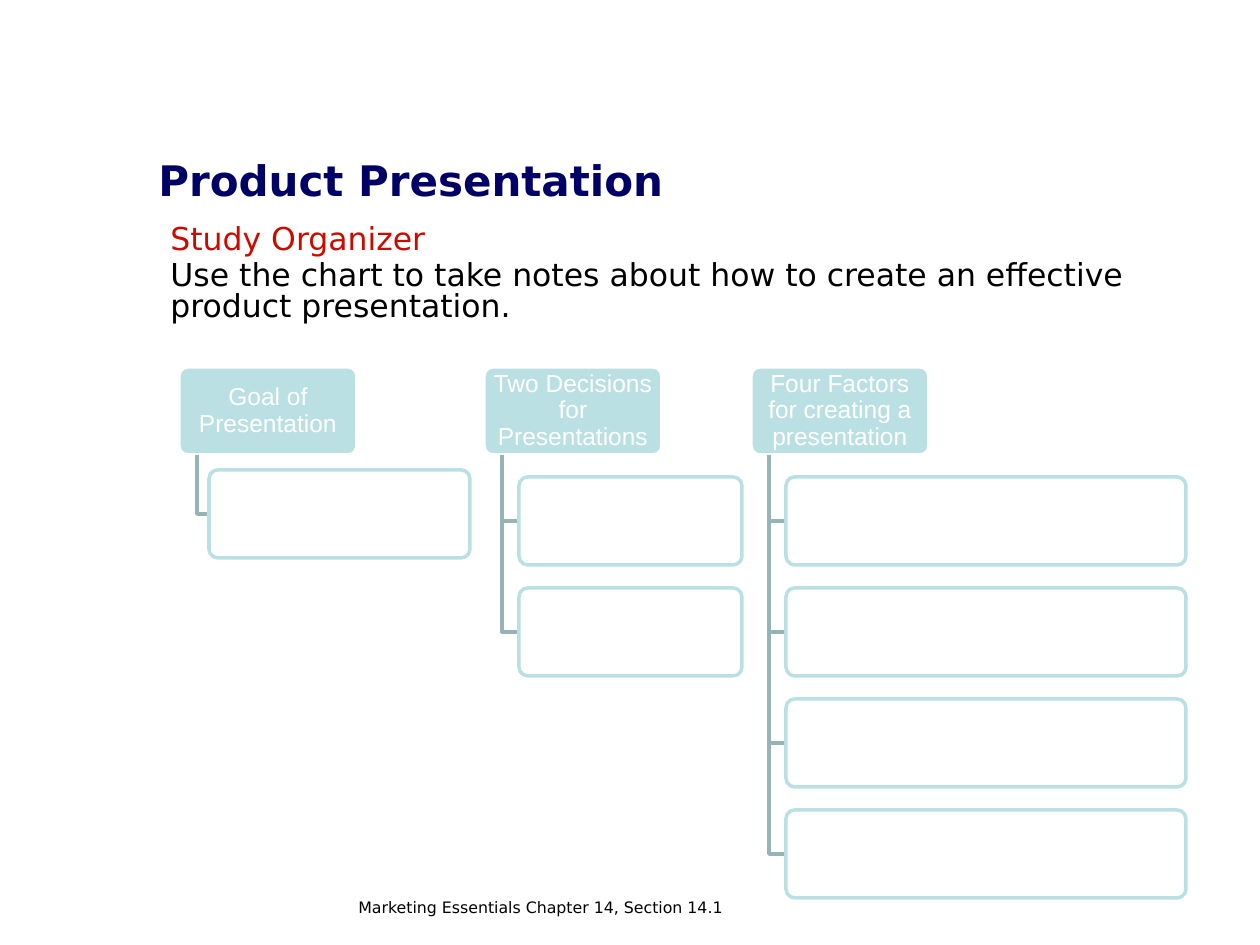
from dataclasses import dataclass

import pptx
import pptx.dml.color
import pptx.enum.shapes
import pptx.enum.text
import pptx.oxml.ns
import pptx.util
from lxml import etree

PX = 914400 // 126
ROUNDED = pptx.enum.shapes.MSO_SHAPE.ROUNDED_RECTANGLE
BOX_HEIGHT = 88
HEAD_TOP, HEAD_WIDTH = 367, 178
STEM_INSET = 18
NOTE_PITCH = 111
TEAL, STEM, WHITE = "BBE0E3", "96B3B6", "FFFFFF"


@dataclass
class Line:
    text: str
    size: int
    color: str
    bold: bool = False
    spacing: float = 1.0
    after: float = 0


@dataclass
class Branch:
    heading: str
    left: int
    note_left: int
    note_top: int
    note_width: int
    notes: int


BRANCHES = [
    Branch("Goal of Presentation", 179, 209, 470, 261, 1),
    Branch("Two Decisions for Presentations", 484, 519, 477, 223, 2),
    Branch("Four Factors for creating a presentation", 751, 786, 477, 400, 4),
]


def px(*lengths: int) -> list:
    return [pptx.util.Emu(length * PX) for length in lengths]


def rgb(color: str):
    return pptx.dml.color.RGBColor.from_string(color)


def write(para, line: Line, font: str) -> None:
    para.text = line.text
    para.line_spacing = line.spacing
    para.space_after = pptx.util.Pt(line.after)
    for span in para.runs:
        span.font.name = font
        span.font.size = pptx.util.Pt(line.size)
        span.font.bold = line.bold
        span.font.color.rgb = rgb(line.color)


def add_text(page, left: int, top: int, width: int, height: int,
             lines: list[Line]) -> None:
    frame = page.shapes.add_textbox(*px(left, top, width, height)).text_frame
    frame.word_wrap = True
    for index, line in enumerate(lines):
        para = frame.add_paragraph() if index else frame.paragraphs[0]
        write(para, line, "DejaVu Sans")


def set_line(shape, color: str) -> None:
    shape.shadow.inherit = False
    shape.line.color.rgb = rgb(color)
    shape.line.width = pptx.util.Pt(2)


def add_box(page, left: int, top: int, width: int, fill: str, line: str):
    box = page.shapes.add_shape(ROUNDED, *px(left, top, width, BOX_HEIGHT))
    box.adjustments[0] = 0.1
    box.fill.solid()
    box.fill.fore_color.rgb = rgb(fill)
    set_line(box, line)
    return box


def add_heading(page, branch: Branch) -> None:
    box = add_box(page, branch.left, HEAD_TOP, HEAD_WIDTH, TEAL, WHITE)
    frame = box.text_frame
    frame.word_wrap = True
    frame.vertical_anchor = pptx.enum.text.MSO_ANCHOR.MIDDLE
    frame.margin_left, frame.margin_right = px(4, 4)
    frame.margin_top, frame.margin_bottom = px(3, 3)
    para = frame.paragraphs[0]
    write(para, Line(branch.heading, 14, WHITE, spacing=0.9), "Arial")
    para.alignment = pptx.enum.text.PP_ALIGN.CENTER


def add_elbow(page, left: int, top: int, right: int, bottom: int) -> None:
    builder = page.shapes.build_freeform(left, top, scale=PX)
    builder.add_line_segments([(left, bottom), (right, bottom)], close=False)
    elbow = builder.convert_to_shape()
    elbow.fill.background()
    set_line(elbow, STEM)


def add_note(page, left: int, top: int, width: int) -> None:
    box = add_box(page, left, top, width, WHITE, TEAL)
    # Slightly transparent fill
    tag = pptx.oxml.ns.qn("a:srgbClr")
    color = box.fill._xPr.find(pptx.oxml.ns.qn("a:solidFill")).find(tag)
    etree.SubElement(color, pptx.oxml.ns.qn("a:alpha"), val="90000")


def add_branch(page, branch: Branch) -> None:
    add_heading(page, branch)
    for index in range(branch.notes):
        top = branch.note_top + index * NOTE_PITCH
        add_elbow(page, branch.left + STEM_INSET, HEAD_TOP + BOX_HEIGHT,
                  branch.note_left, top + BOX_HEIGHT // 2)
        add_note(page, branch.note_left, top, branch.note_width)


def main() -> None:
    deck = pptx.Presentation()
    deck.slide_width = pptx.util.Inches(10)
    deck.slide_height = pptx.util.Inches(7.5)
    page = deck.slides.add_slide(deck.slide_layouts[6])

    # Title, introduction and footer
    add_text(page, 146, 148, 1094, 136,
             [Line("Product Presentation", 24, "000066", bold=True)])
    add_text(page, 158, 220, 1029, 388, [
        Line("Study Organizer", 18, "CA0C00", spacing=0.8, after=3.6),
        Line("Use the chart to take notes about how to create an effective "
             "product presentation.", 18, "000000", spacing=0.8),
    ])
    add_text(page, 346, 892, 840, 32,
             [Line("Marketing Essentials Chapter 14, Section 14.1", 9, "000000")])

    # Study organizer
    for branch in BRANCHES:
        add_branch(page, branch)

    deck.save("out.pptx")


if __name__ == "__main__":
    main()
